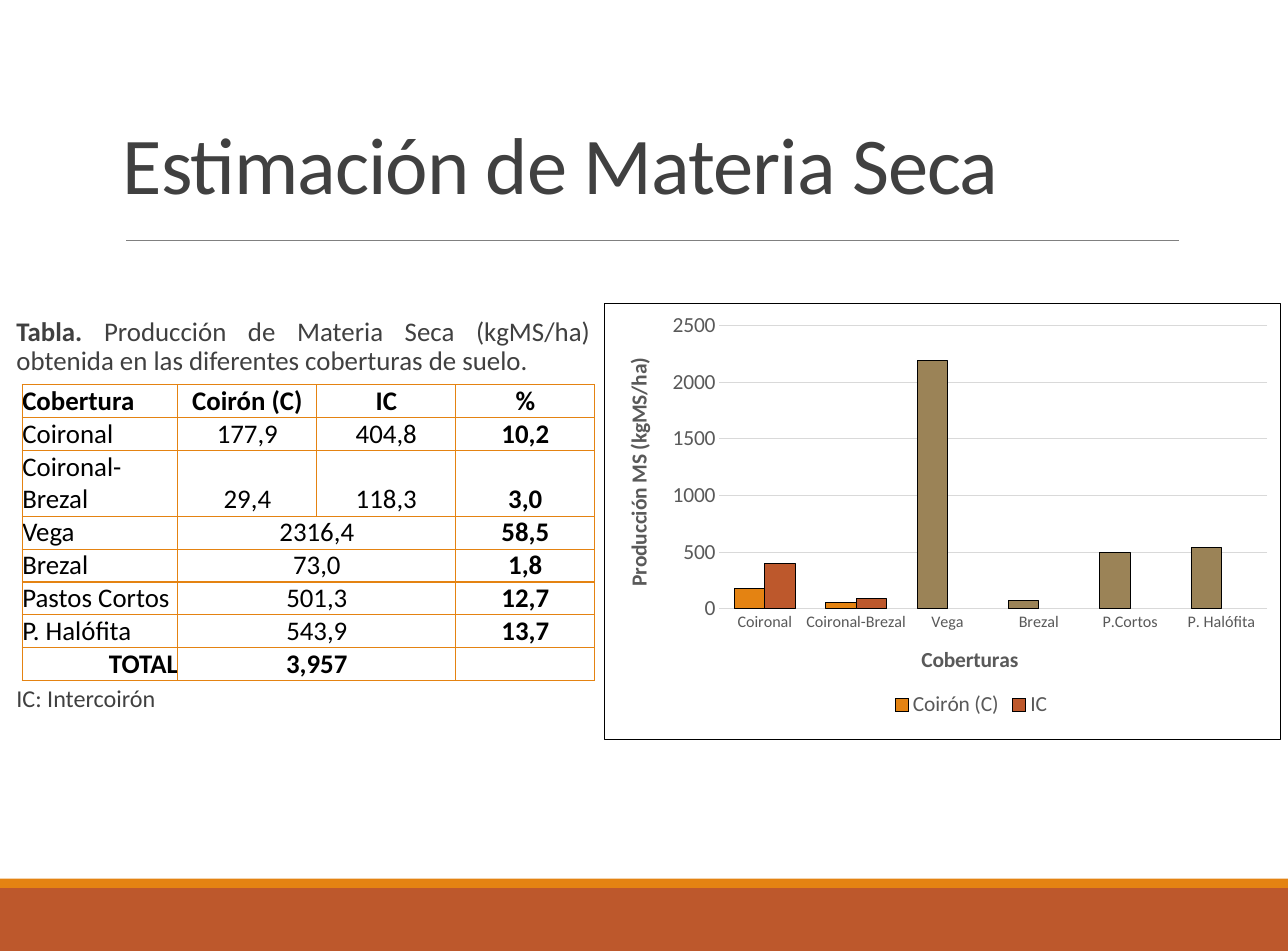
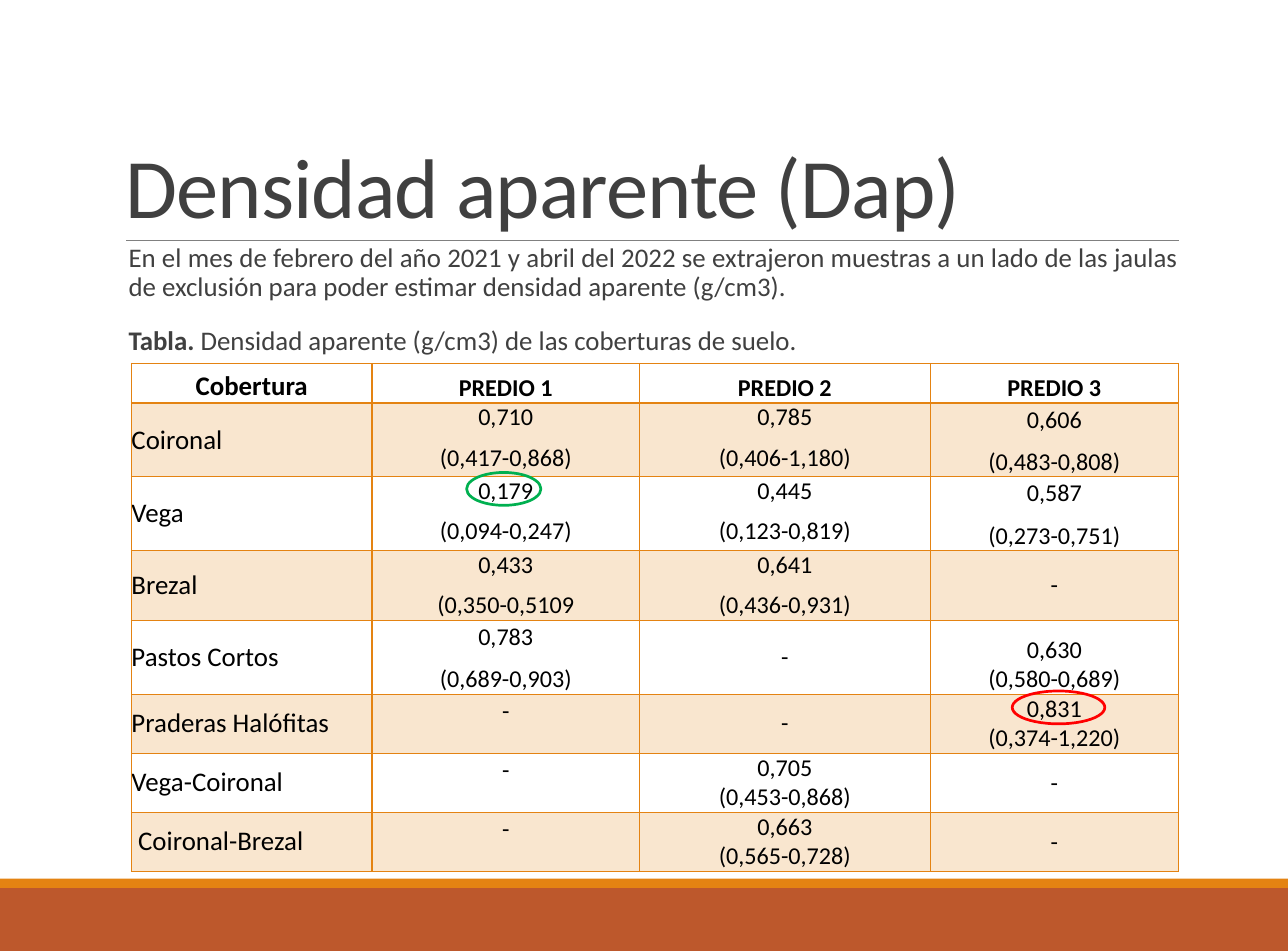
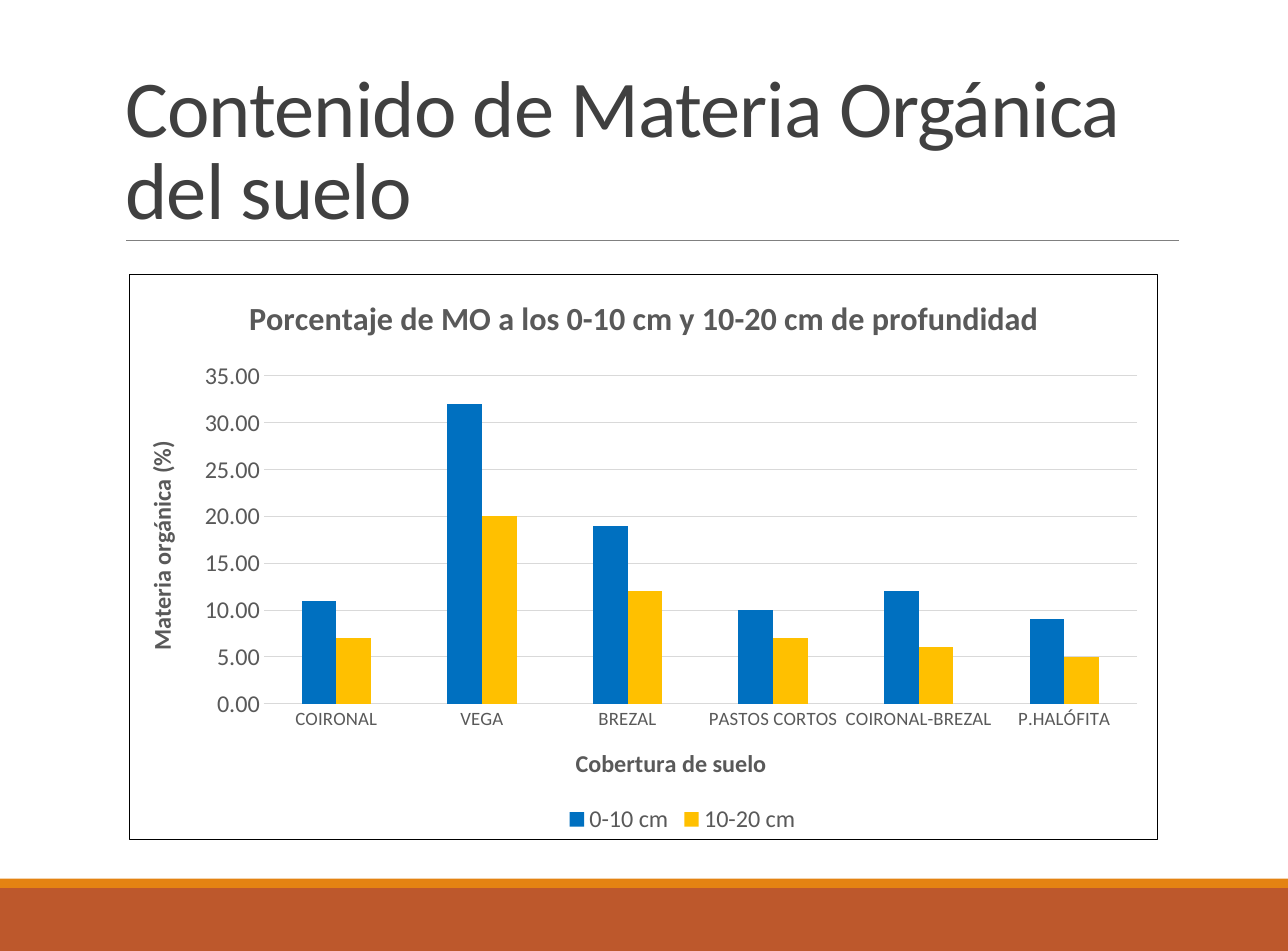
from dataclasses import dataclass, replace

from lxml.etree import SubElement
from pptx import Presentation
from pptx.chart.data import CategoryChartData
from pptx.dml.color import RGBColor
from pptx.enum.chart import XL_CHART_TYPE, XL_LEGEND_POSITION, XL_TICK_MARK
from pptx.enum.shapes import MSO_CONNECTOR, MSO_SHAPE
from pptx.enum.text import MSO_ANCHOR, MSO_AUTO_SIZE, PP_ALIGN
from pptx.oxml import parse_xml
from pptx.oxml.ns import nsdecls, qn
from pptx.util import Pt


@dataclass(frozen=True)
class Theme:
    font: str = "Calibri"
    orange: str = "E48312"
    rust: str = "BD582C"
    khaki: str = "9B8357"
    blue: str = "0070C0"
    yellow: str = "FFC000"
    green: str = "00B050"
    red: str = "FF0000"
    text: str = "404040"
    chart_text: str = "595959"
    rule: str = "808080"
    grid: str = "D9D9D9"
    black: str = "000000"
    title: int = 60
    body: int = 20
    small: int = 18


@dataclass(frozen=True)
class CellStyle:
    size: int = 20
    bold: bool = False
    align: PP_ALIGN = PP_ALIGN.CENTER
    anchor: MSO_ANCHOR = MSO_ANCHOR.BOTTOM
    spacing: float = 1.0
    after: int = 0
    inset: int = 0


@dataclass(frozen=True)
class ChartStyle:
    category_size: int
    size: int
    gap: int
    maximum: int
    unit: int
    number_format: str
    plot: tuple
    legend: tuple
    outline: bool = False


T = Theme()


def rgb(value):
    return RGBColor.from_string(value)


def points(*values):
    return [Pt(v) for v in values]


def set_font(font, size, color, bold=None):
    font.name = T.font
    font.size = Pt(size)
    font.color.rgb = rgb(color)
    font.bold = bold


def set_line(line, color, width):
    line.color.rgb = rgb(color)
    line.width = Pt(width)


def add_band(slide, top, height, color):
    sp = slide.shapes.add_shape(MSO_SHAPE.RECTANGLE, *points(0, top, 960, height))
    sp.shadow.inherit = False
    sp.fill.solid()
    sp.fill.fore_color.rgb = rgb(color)
    sp.line.fill.background()
    return sp


def add_rule(slide, left, right, y):
    line = slide.shapes.add_connector(MSO_CONNECTOR.STRAIGHT, *points(left, y, right, y))
    set_line(line.line, T.rule, 0.5)
    SubElement(line.element.xpath("p:spPr")[0], qn("a:effectLst"))
    return line


def decorate_layout(layout, slide):
    for placeholder in list(layout.placeholders)[1:]:
        layout.shapes.element.remove(placeholder.element)
    shared = (
        add_band(slide, 661.5, 47, T.rust),
        add_band(slide, 654.5, 7, T.orange),
        add_rule(slide, 94.3, 879.1, 179.3),
    )
    for sp in shared:
        layout.shapes.element.append(sp.element)


def set_title(slide, text, box=(86.4, 29.5, 792, 149.8), size=T.title):
    sp = slide.shapes.title
    sp.left, sp.top, sp.width, sp.height = points(*box)
    tf = sp.text_frame
    tf.text = text
    tf.word_wrap = True
    tf.auto_size = MSO_AUTO_SIZE.NONE
    tf.vertical_anchor = MSO_ANCHOR.BOTTOM
    p = tf.paragraphs[0]
    p.alignment = PP_ALIGN.LEFT
    p.line_spacing = 0.85
    set_font(p.font, size, T.text)
    p._p.xpath("a:pPr/a:defRPr")[0].set("spc", "-70")


def add_text(slide, box, paragraphs, size=T.body):
    tf = slide.shapes.add_textbox(*points(*box)).text_frame
    tf.word_wrap = True
    tf.margin_left = tf.margin_right = 0
    for i, runs in enumerate(paragraphs):
        p = tf.paragraphs[0] if i == 0 else tf.add_paragraph()
        p.alignment = PP_ALIGN.JUSTIFY
        p.line_spacing = 0.9
        p.space_before = Pt(15.8 if i else 0)
        p.space_after = Pt(2.6)
        set_font(p.font, size, T.text)
        for text, bold in runs:
            r = p.add_run()
            r.text = text
            if bold:
                r.font.bold = True


def add_ellipse(slide, box, color):
    sp = slide.shapes.add_shape(MSO_SHAPE.OVAL, *points(*box))
    sp.shadow.inherit = False
    sp.fill.background()
    set_line(sp.line, color, 2)


def set_borders(cell, top, bottom):
    tcPr = cell._tc.get_or_add_tcPr()
    for tag, width in (("lnL", 1), ("lnR", 1), ("lnT", top), ("lnB", bottom)):
        ln = SubElement(tcPr, qn(f"a:{tag}"), w=str(Pt(width)))
        SubElement(SubElement(ln, qn("a:solidFill")), qn("a:srgbClr"), val=T.orange)


def fill_cell(cell, shaded):
    if not shaded:
        cell.fill.background()
        return
    cell.fill.solid()
    cell.fill.fore_color.rgb = rgb(T.orange)
    color = cell._tc.tcPr.xpath("a:solidFill/a:srgbClr")[0]
    SubElement(color, qn("a:alpha"), val="20000")


def write_cell(cell, text, style):
    cell.margin_left = cell.margin_right = Pt(style.inset)
    cell.margin_top = cell.margin_bottom = 0
    cell.vertical_anchor = style.anchor
    cell.text_frame.text = text
    for p in cell.text_frame.paragraphs:
        p.alignment = style.align
        p.line_spacing = style.spacing
        p.space_after = Pt(style.after)
        set_font(p.font, style.size, T.black, style.bold)


def add_table(slide, left, top, widths, heights, rows, header_rule=1, banded=False):
    box = points(left, top, sum(widths), sum(heights))
    table = slide.shapes.add_table(len(rows), len(widths), *box).table
    table.first_row = table.horz_banding = False
    for column, width in zip(table.columns, widths):
        column.width = Pt(width)
    for i, (height, cells) in enumerate(zip(heights, rows)):
        table.rows[i].height = Pt(height)
        for j, content in enumerate(cells):
            cell = table.cell(i, j)
            set_borders(cell, header_rule if i == 1 else 1, header_rule if i == 0 else 1)
            fill_cell(cell, banded and i % 2 == 1)
            if content is None:
                table.cell(i, j - 1).merge(cell)
            else:
                write_cell(cell, *content)


def set_heading(owner, text, size):
    owner.has_title = True
    tf = (owner.chart_title if hasattr(owner, "chart_title") else owner.axis_title).text_frame
    tf.text = text
    set_font(tf.paragraphs[0].font, size, T.chart_text, True)


def place(parent, index, inner=False, **frame):
    for old in parent.findall(qn("c:layout")):
        parent.remove(old)
    layout = parse_xml(f"<c:layout {nsdecls('c')}/>")
    manual = SubElement(layout, qn("c:manualLayout"))
    if inner:
        SubElement(manual, qn("c:layoutTarget"), val="inner")
    for key in "xy":
        SubElement(manual, qn(f"c:{key}Mode"), val="edge")
    for key, value in frame.items():
        SubElement(manual, qn(f"c:{key}"), val=str(value))
    parent.insert(index, layout)


def frame_chart(chart):
    chart.element.find(qn("c:chart")).addnext(parse_xml(
        f"<c:spPr {nsdecls('c', 'a')}><a:noFill/><a:ln w='{Pt(0.75)}'><a:solidFill>"
        f"<a:srgbClr val='{T.black}'/></a:solidFill></a:ln></c:spPr>"))


def paint(fmt, color, outline):
    fmt.fill.solid()
    fmt.fill.fore_color.rgb = rgb(color)
    if outline:
        set_line(fmt.line, T.black, 0.75)


def format_axes(chart, style, category_title, value_title):
    category, value = chart.category_axis, chart.value_axis
    for axis, size, title in ((category, style.category_size, category_title),
                              (value, style.size, value_title)):
        axis.major_tick_mark = axis.minor_tick_mark = XL_TICK_MARK.NONE
        set_font(axis.tick_labels.font, size, T.chart_text)
        set_heading(axis, title, style.size)
    set_line(category.format.line, T.grid, 0.75)
    value.format.line.fill.background()
    value.minimum_scale, value.maximum_scale = 0, style.maximum
    value.major_unit = style.unit
    value.has_major_gridlines = True
    set_line(value.major_gridlines.format.line, T.grid, 0.75)
    value.tick_labels.number_format = style.number_format
    value.tick_labels.number_format_is_linked = False


def add_column_chart(slide, box, categories, series, style, category_title, value_title):
    data = CategoryChartData()
    data.categories = categories
    for name, values, _ in series:
        data.add_series(name, values)
    chart = slide.shapes.add_chart(XL_CHART_TYPE.COLUMN_CLUSTERED, *points(*box), data).chart
    set_font(chart.font, style.size, T.chart_text)
    frame_chart(chart)
    chart.has_title = False
    plot = chart.plots[0]
    plot.vary_by_categories = False
    plot.gap_width, plot.overlap = style.gap, 0
    for ser, (_, _, color) in zip(plot.series, series):
        paint(ser.format, color, style.outline)
    format_axes(chart, style, category_title, value_title)
    chart.has_legend = True
    chart.legend.position = XL_LEGEND_POSITION.BOTTOM
    chart.legend.include_in_layout = False
    set_font(chart.legend.font, style.size, T.chart_text)
    place(chart.element.xpath(".//c:plotArea")[0], 0, True, **dict(zip("xywh", style.plot)))
    place(chart.element.xpath(".//c:legend")[0], 1, **dict(zip("xy", style.legend)))
    return chart


def build_dry_matter(slide):
    set_title(slide, "Estimación de Materia Seca", (84.25, 10.8, 823.7, 149.8))
    add_text(slide, (12.25, 233.3, 427.7, 79.2), [[
        ("Tabla. ", True),
        ("Producción de Materia Seca (kgMS/ha) obtenida en las diferentes coberturas de suelo.", False)]])

    number = CellStyle()
    label = replace(number, align=PP_ALIGN.LEFT)
    strong = replace(number, bold=True)
    strong_label = replace(label, bold=True)
    yields = [
        ("Coironal", "177,9", "404,8", "10,2"),
        ("Coironal-Brezal", "29,4", "118,3", "3,0"),
        ("Vega", "2316,4", None, "58,5"),
        ("Brezal", "73,0", None, "1,8"),
        ("Pastos Cortos", "501,3", None, "12,7"),
        ("P. Halófita", "543,9", None, "13,7"),
    ]
    rows = [[("Cobertura", strong_label)] + [(t, strong) for t in ("Coirón (C)", "IC", "%")]]
    for name, coiron, between, share in yields:
        rows.append([(name, label), (coiron, number), between and (between, number), (share, strong)])
    rows.append([("TOTAL", replace(strong, align=PP_ALIGN.RIGHT)), ("3,957", strong), None, ("", strong)])
    line = 24.5
    add_table(slide, 16.6, 286.6, [116] + [103.6] * 3, [line, line, 2 * line] + [line] * 5, rows)
    add_text(slide, (12.25, 508.3, 321, 43), [[("IC: Intercoirón", False)]], T.small)

    style = ChartStyle(12, 16, 100, 2500, 500, "0", (0.17, 0.05, 0.81, 0.65), (0.42, 0.88), True)
    chart = add_column_chart(
        slide, (450, 226, 505, 325.5),
        ["Coironal", "Coironal-Brezal", "Vega", "Brezal", "P.Cortos", "P. Halófita"],
        [("Coirón (C)", [180, 60, 2190, 70, 500, 540], T.orange),
         ("IC", [400, 90] + [None] * 4, T.rust)],
        style, "Coberturas", "Producción MS (kgMS/ha)")
    for i in range(2, 6):
        paint(chart.plots[0].series[0].points[i].format, T.khaki, True)


def build_density(slide):
    set_title(slide, "Densidad aparente (Dap)", size=63)
    add_text(slide, (95.8, 178.6, 782.6, 90), [
        [("En el mes de febrero del año 2021 y abril del 2022 se extrajeron muestras a un lado de las "
          "jaulas de exclusión para poder estimar densidad aparente (g/cm3).", False)],
        [("Tabla. ", True), ("Densidad aparente (g/cm3) de las coberturas de suelo.", False)]])

    header = CellStyle(size=T.small, bold=True)
    name = CellStyle(align=PP_ALIGN.LEFT, anchor=MSO_ANCHOR.MIDDLE)
    tight = CellStyle(size=T.small)
    middle = replace(tight, anchor=MSO_ANCHOR.MIDDLE)
    spread = replace(tight, anchor=MSO_ANCHOR.TOP, after=8, inset=5)
    loose = replace(spread, spacing=1.07)
    low = replace(loose, anchor=MSO_ANCHOR.BOTTOM)
    rows = [
        [("Cobertura", replace(header, size=T.body))] + [(f"PREDIO {n}", header) for n in (1, 2, 3)],
        [("Coironal", name), ("0,710\n(0,417-0,868)", spread),
         ("0,785\n(0,406-1,180)", spread), ("0,606\n(0,483-0,808)", low)],
        [("Vega", name), ("0,179\n(0,094-0,247)", spread),
         ("0,445\n(0,123-0,819)", spread), ("0,587\n(0,273-0,751)", low)],
        [("Brezal", name), ("0,433\n(0,350-0,5109", spread),
         ("0,641\n(0,436-0,931)", replace(tight, after=8)), ("-", middle)],
        [("Pastos Cortos", name), ("0,783\n(0,689-0,903)", loose),
         ("-", middle), ("0,630\n(0,580-0,689)", tight)],
        [("Praderas Halófitas", name), ("-", loose), ("-", middle), ("0,831\n(0,374-1,220)", tight)],
        [("Vega-Coironal", name), ("-", loose), ("0,705\n(0,453-0,868)", tight), ("-", middle)],
        [("Coironal-Brezal", replace(name, inset=5)), ("-", loose),
         ("0,663\n(0,565-0,728)", tight), ("-", middle)],
    ]
    add_table(slide, 98, 270.7, [179.3, 199.4, 216.7, 185], [29.5, 55, 55, 52, 55, 44, 44, 44],
              rows, header_rule=2, banded=True)
    add_ellipse(slide, (347.8, 352, 55.4, 24.5), T.green)
    add_ellipse(slide, (754.5, 514.8, 69, 24.5), T.red)


def build_organic_matter(slide):
    set_title(slide, "Contenido de Materia Orgánica del suelo")
    style = ChartStyle(14, 18, 219, 35, 5, "0.00", (0.13, 0.18, 0.85, 0.58), (0.42, 0.93))
    chart = add_column_chart(
        slide, (96.5, 203.8, 766.8, 422),
        ["COIRONAL", "VEGA", "BREZAL", "PASTOS CORTOS", "COIRONAL-BREZAL", "P.HALÓFITA"],
        [("0-10 cm", [11, 32, 19, 10, 12, 9], T.blue),
         ("10-20 cm", [7, 20, 12, 7, 6, 5], T.yellow)],
        style, "Cobertura de suelo", "Materia orgánica (%)")
    set_heading(chart, "Porcentaje de MO a los 0-10 cm y 10-20 cm de profundidad", 24)


def main():
    prs = Presentation()
    prs.slide_width, prs.slide_height = points(960, 708.5)
    layout = prs.slide_layouts[5]
    slides = [prs.slides.add_slide(layout) for _ in range(3)]
    decorate_layout(layout, slides[0])
    for build, slide in zip((build_dry_matter, build_density, build_organic_matter), slides):
        build(slide)
    prs.save("out.pptx")


if __name__ == "__main__":
    main()
